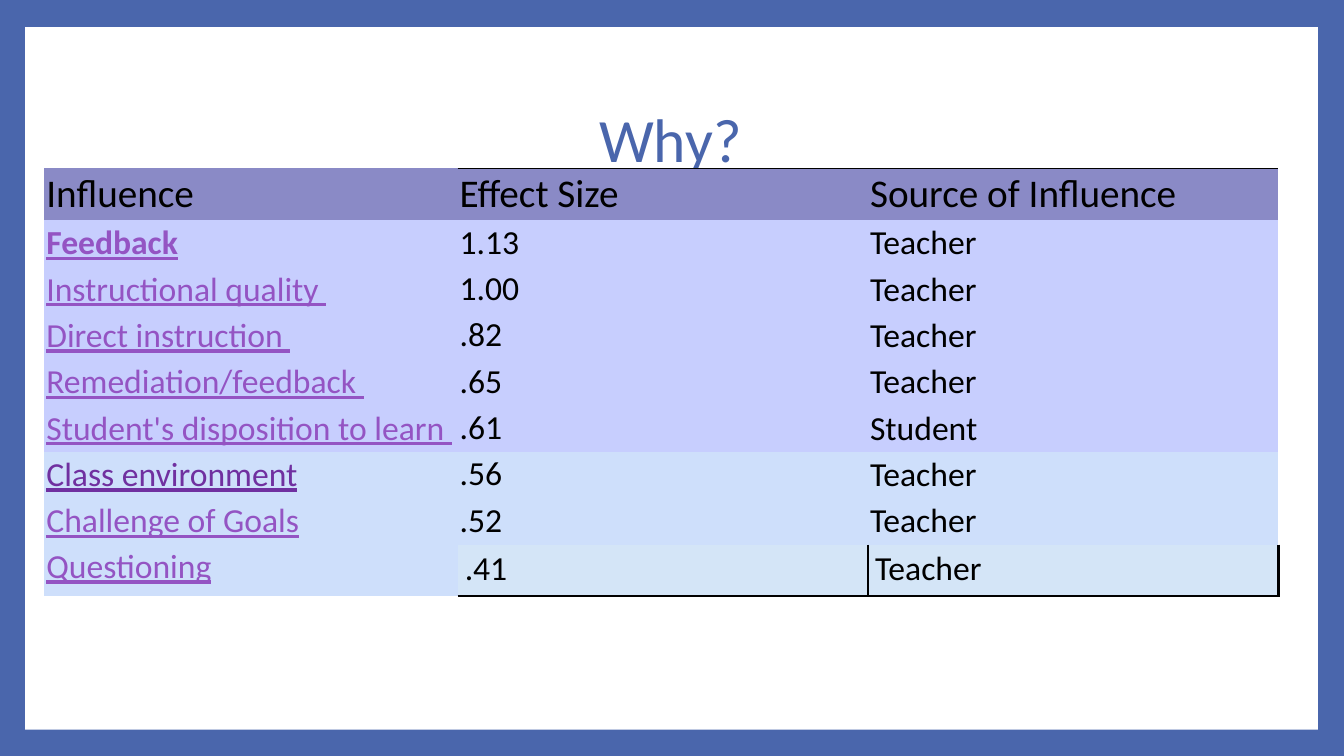
from dataclasses import dataclass

from lxml.etree import SubElement
from pptx import Presentation
from pptx.dml.color import RGBColor as RGB
from pptx.enum.shapes import MSO_SHAPE as SHAPE
from pptx.enum.text import MSO_ANCHOR as ANCHOR, PP_ALIGN as ALIGN
from pptx.oxml.ns import qn
from pptx.util import Inches, Pt


@dataclass(frozen=True)
class Theme:
    """Colours, font and type sizes of the slide."""
    font: str = "Calibri"
    blue: str = "4A66AC"
    white: str = "FFFFFF"
    black: str = "000000"
    link: str = "9454C3"
    seen: str = "7030A0"
    head: str = "8A8AC6"
    high: str = "C7CEFE"
    mid: str = "CEDFFB"
    low: str = "D4E5F7"
    title: int = 44
    top: int = 28
    body: int = 24


THEME = Theme()
PLAIN = "{2D5ABB26-0587-4C30-8999-92F81FD0307C}"
SIDES = ("L", "R", "T", "B")
HEADS = ("Influence", "Effect Size", "Source of Influence")
ROWS = (
    ("Feedback", "1.13", "Teacher"),
    ("Instructional quality ", "1.00", "Teacher"),
    ("Direct instruction ", ".82", "Teacher"),
    ("Remediation/feedback ", ".65", "Teacher"),
    ("Student's disposition to learn ", ".61", "Student"),
    ("Class environment", ".56", "Teacher"),
    ("Challenge of Goals", ".52", "Teacher"),
    ("Questioning", ".41", "Teacher"),
)
COLS = (4.1, 4.07, 4.07)
LAST = len(ROWS)
SPLIT = 5
TOPS = {(2, 1), (3, 1), (5, 1), (6, 1), (LAST, 0), (LAST, 1), (LAST, 2)}
RULES = {
    (0, 1): {"T": 1},
    (0, 2): {"T": 1},
    (LAST, 1): {"R": 1, "B": 2},
    (LAST, 2): {"L": 1, "R": 2, "B": 2},
}


def paint(fill, color):
    """Give a fill one solid colour."""
    fill.solid()
    fill.fore_color.rgb = RGB.from_string(color)


def style(para, size, color):
    """Set the font of a paragraph."""
    font = para.font
    font.name = THEME.font
    font.size = Pt(size)
    font.color.rgb = RGB.from_string(color)
    return font


def add_panel(slide):
    """Place the white panel behind the title."""
    panel = slide.shapes.add_shape(
        SHAPE.RECTANGLE, Inches(0.25), Inches(0.27), Inches(12.82), Inches(6.97))
    panel.shadow.inherit = False
    paint(panel.fill, THEME.white)
    panel.line.fill.background()
    slide.shapes.title.element.addprevious(panel.element)


def set_title(slide, text):
    """Place and format the title."""
    title = slide.shapes.title
    title.left, title.top = Inches(1.25), Inches(0.67)
    title.width, title.height = Inches(10.8), Inches(1.48)
    title.text = text
    title.text_frame.vertical_anchor = ANCHOR.MIDDLE
    para = title.text_frame.paragraphs[0]
    para.alignment = ALIGN.CENTER
    para.line_spacing = 0.9
    style(para, THEME.title, THEME.blue)


def add_rules(cell, rules):
    """Draw the black borders of a cell."""
    props = cell._tc.get_or_add_tcPr()
    for spot, side in enumerate(s for s in SIDES if s in rules):
        line = SubElement(props, qn("a:ln" + side), w=str(Pt(rules[side])))
        fill = SubElement(line, qn("a:solidFill"))
        SubElement(fill, qn("a:srgbClr"), val=THEME.black)
        props.insert(spot, line)


def shade(row, col):
    """Choose the fill of a cell."""
    if row == 0:
        return THEME.head
    if row <= SPLIT:
        return THEME.high
    return THEME.low if row == LAST and col else THEME.mid


def fill_cell(cell, row, col, text):
    """Write and format one cell."""
    wide = row == LAST and col > 0
    cell.margin_left = cell.margin_right = Inches(0.07 if wide else 0.02)
    cell.margin_top = cell.margin_bottom = Inches(0.04 if wide else 0.02)
    cell.vertical_anchor = ANCHOR.TOP if (row, col) in TOPS else ANCHOR.MIDDLE
    paint(cell.fill, shade(row, col))
    add_rules(cell, RULES.get((row, col), {}))
    cell.text = text
    para = cell.text_frame.paragraphs[0]
    if row and col == 0:
        color = THEME.seen if row == SPLIT + 1 else THEME.link
        font = style(para, THEME.body, color)
        font.underline = True
        font.bold = row == 1
    else:
        style(para, THEME.body if row else THEME.top, THEME.black)


def add_grid(slide):
    """Add the table of influences."""
    data = (HEADS, *ROWS)
    frame = slide.shapes.add_table(
        len(data), len(COLS), Inches(0.44), Inches(1.67),
        Inches(sum(COLS)), Inches(0.46 * len(data)))
    for mark in frame.element.iter(qn("a:tableStyleId")):
        mark.text = PLAIN
    table = frame.table
    table.first_row = table.horz_banding = False
    for col, width in zip(table.columns, COLS):
        col.width = Inches(width)
    for row, line in enumerate(data):
        table.rows[row].height = Inches(0.51 if row == LAST else 0.46)
        for col, text in enumerate(line):
            fill_cell(table.cell(row, col), row, col, text)


def main():
    """Build and save the slide."""
    deck = Presentation()
    deck.slide_width, deck.slide_height = Inches(13.33), Inches(7.5)
    slide = deck.slides.add_slide(deck.slide_layouts[5])
    paint(slide.background.fill, THEME.blue)
    add_panel(slide)
    set_title(slide, "Why?")
    add_grid(slide)
    deck.save("out.pptx")


if __name__ == "__main__":
    main()
